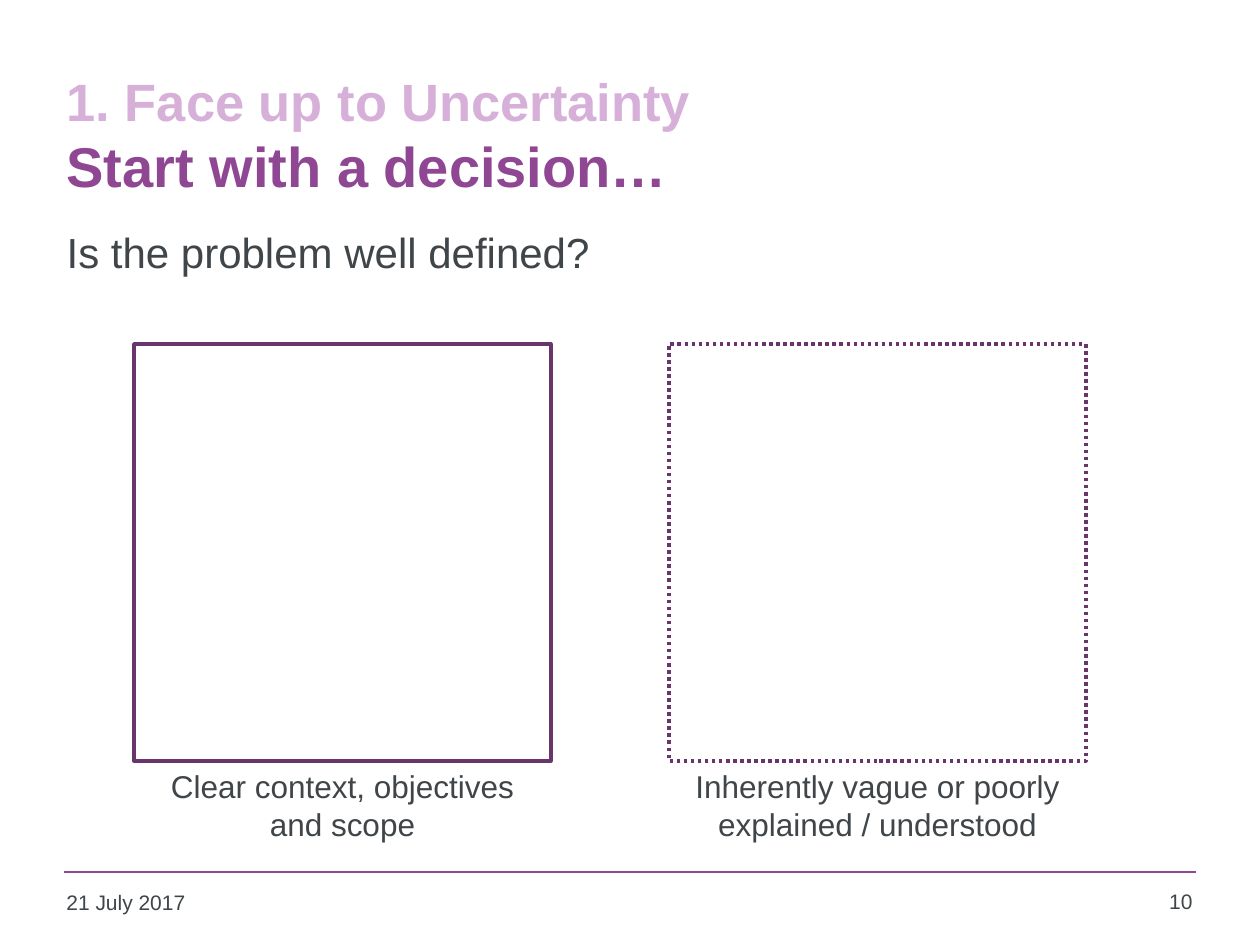
from pptx import Presentation
from pptx.dml.color import RGBColor
from pptx.enum.dml import MSO_LINE
from pptx.enum.shapes import MSO_CONNECTOR, MSO_SHAPE
from pptx.enum.text import MSO_ANCHOR, MSO_AUTO_SIZE, PP_ALIGN
from pptx.oxml.ns import qn
from pptx.util import Emu, Inches, Pt
from lxml import etree

PX = Inches(1) / 126
INK, PLUM, VIOLET, LILAC = "3F4548", "6A346D", "8F4693", "D7B0D9"

HEADING = [
    ("1. Face up to Uncertainty", 30, LILAC, True),
    ("Start with a decision…", 32, VIOLET, True),
]
QUESTION = [("Is the problem well defined?", 24, INK, False)]
CASES = [
    ("Clear context, objectives and scope", MSO_LINE.SOLID),
    ("Inherently vague or poorly explained / understood", MSO_LINE.ROUND_DOT),
]
FOOTER = [
    ("21 July 2017", (54, 883, 277, 45), PP_ALIGN.LEFT),
    ("10", (1116, 882, 89, 47), PP_ALIGN.RIGHT),
]
SQUARE_LEFT, SQUARE_TOP, SIDE, STEP = 134, 344, 417, 535
CAPTION_HEIGHT = 83


def px(*lengths):
    return [Emu(round(length * PX)) for length in lengths]


def color(hex_string):
    return RGBColor.from_string(hex_string)


def write(box, lines, align=PP_ALIGN.LEFT, anchor=MSO_ANCHOR.TOP):
    frame = box.text_frame
    frame.text = "\n".join(line[0] for line in lines)
    frame.word_wrap = True
    frame.auto_size = MSO_AUTO_SIZE.NONE
    frame.vertical_anchor = anchor
    for paragraph, (_, size, ink, bold) in zip(frame.paragraphs, lines):
        paragraph.alignment = align
        paragraph.space_before = Pt(0)
        font = paragraph.runs[0].font
        font.name, font.size, font.bold = "Arial", Pt(size), bold
        font.color.rgb = color(ink)


def place(placeholder, bounds):
    (placeholder.left, placeholder.top,
     placeholder.width, placeholder.height) = px(*bounds)


def add_label(slide, text, bounds, size, align):
    write(slide.shapes.add_textbox(*px(*bounds)), [(text, size, INK, False)], align)


def add_rule(slide):
    rule = slide.shapes.add_connector(MSO_CONNECTOR.STRAIGHT, *px(64, 872, 1196, 872))
    rule.line.color.rgb = color(VIOLET)
    rule.line.width = Pt(1)
    etree.SubElement(rule.element.spPr, qn("a:effectLst"))


def add_case(slide, index, caption, dash):
    left = SQUARE_LEFT + index * STEP
    square = slide.shapes.add_shape(
        MSO_SHAPE.RECTANGLE, *px(left, SQUARE_TOP, SIDE, SIDE))
    square.shadow.inherit = False
    square.fill.background()
    square.line.color.rgb = color(PLUM)
    square.line.width = Pt(2)
    square.line.dash_style = dash
    add_label(slide, caption, (left, SQUARE_TOP + SIDE, SIDE, CAPTION_HEIGHT),
              18, PP_ALIGN.CENTER)


def main():
    deck = Presentation()
    deck.slide_width, deck.slide_height = Inches(10), Inches(7.5)
    slide = deck.slides.add_slide(deck.slide_layouts[1])

    add_rule(slide)
    title, question = slide.placeholders
    place(title, (54, 55, 1143, 158))
    write(title, HEADING, anchor=MSO_ANCHOR.MIDDLE)
    place(question, (54, 220, 1143, 83))
    write(question, QUESTION)
    properties = question.text_frame.paragraphs[0]._p.get_or_add_pPr()
    properties.set("marL", "0")
    properties.set("indent", "0")
    etree.SubElement(properties, qn("a:buNone"))

    for text, bounds, align in FOOTER:
        add_label(slide, text, bounds, 12, align)
    for index, (caption, dash) in enumerate(CASES):
        add_case(slide, index, caption, dash)

    deck.save("out.pptx")


if __name__ == "__main__":
    main()
